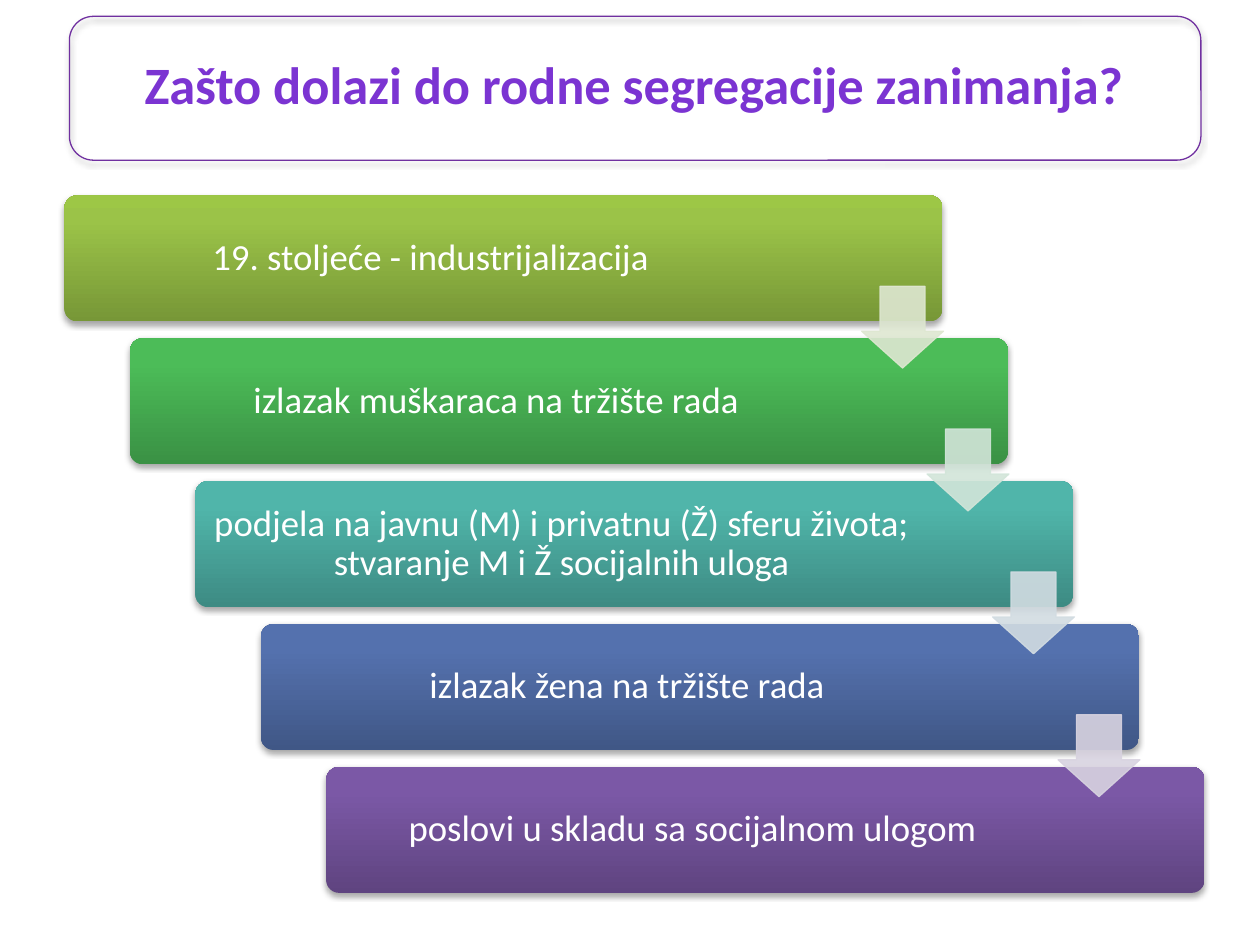
from dataclasses import dataclass

import pptx
import pptx.dml.color
import pptx.enum.shapes
import pptx.enum.text
import pptx.oxml
import pptx.oxml.ns
import pptx.util
from pptx.util import Cm

SHAPE = pptx.enum.shapes.MSO_SHAPE
FONT = "Calibri"
COLORS = {"title": "7B34D2", "frame": "7030A0", "text": "FFFFFF", "shadow": "000000"}
NS = pptx.oxml.ns.nsdecls("a")

# Staircase grid, in centimetres
LEFT, TOP = 1.3, 3.94
STEP_X, STEP_Y = 1.32, 2.88
BAR_W, BAR_H = 17.7, 2.54
TEXT_W = 14.76
ARROW_DX, ARROW_DY, ARROW = 16.07, 1.83, 1.65


@dataclass
class Step:
    text: str
    gradient: tuple[str, str, str]  # bottom, near top, top
    arrow: str | None = None        # arrow to the next step


STEPS = [
    Step("19. stoljeće - industrijalizacija", ("779737", "9BC348", "9DC746"), "DEE7D1"),
    Step("izlazak muškaraca na tržište rada", ("3A9144", "4CBC58", "4ABF57"), "D2E5D9"),
    Step("podjela na javnu (M) i privatnu (Ž) sferu života; stvaranje M i Ž socijalnih uloga",
         ("3D8B83", "50B5AA", "4EB8AC"), "D2DCE2"),
    Step("izlazak žena na tržište rada", ("405786", "5471AE", "5271B0"), "D8D3E0"),
    Step("poslovi u skladu sa socijalnom ulogom", ("5F4480", "7B58A6", "7C57A8")),
]


def rgb(color: str) -> pptx.dml.color.RGBColor:
    return pptx.dml.color.RGBColor.from_string(color)


def write_text(s, text: str, *, size: float, color: str, bold: bool = False,
               inset: float = 0.23) -> None:
    tf = s.text_frame
    tf.word_wrap = True
    tf.auto_size = pptx.enum.text.MSO_AUTO_SIZE.NONE
    tf.vertical_anchor = pptx.enum.text.MSO_ANCHOR.MIDDLE
    tf.margin_left = tf.margin_right = tf.margin_top = tf.margin_bottom = Cm(inset)
    p = tf.paragraphs[0]
    p.alignment = pptx.enum.text.PP_ALIGN.CENTER
    p.line_spacing = 0.9
    r = p.add_run()
    r.text = text
    r.font.name, r.font.size, r.font.bold = FONT, pptx.util.Pt(size), bold
    r.font.color.rgb = rgb(color)


def add_shape(slide, kind, x: float, y: float, w: float, h: float, adjustments=()):
    s = slide.shapes.add_shape(kind, Cm(x), Cm(y), Cm(w), Cm(h))
    s.shadow.inherit = False
    for i, value in enumerate(adjustments):
        s.adjustments[i] = value
    return s


def add_shadow(s) -> None:
    effects = s._element.spPr.find(pptx.oxml.ns.qn("a:effectLst"))
    effects.append(pptx.oxml.parse_xml(
        f'<a:outerShdw {NS} blurRad="40000" dist="23000" dir="5400000" rotWithShape="0">'
        f'<a:srgbClr val="{COLORS["shadow"]}"><a:alpha val="35000"/></a:srgbClr>'
        '</a:outerShdw>'))


def fill_gradient(s, colors: tuple[str, str, str]) -> None:
    s.fill.gradient()
    s.fill.gradient_angle = 90
    stops = next(s._element.spPr.iter(pptx.oxml.ns.qn("a:gsLst")))
    for stop in list(stops):
        stops.remove(stop)
    for position, color in zip((0, 80, 100), colors):
        stops.append(pptx.oxml.parse_xml(
            f'<a:gs {NS} pos="{position * 1000}"><a:srgbClr val="{color}"/></a:gs>'))


def add_title(slide, text: str) -> None:
    frame = add_shape(slide, SHAPE.ROUNDED_RECTANGLE, 1.4, 0.33, 22.81, 2.9)
    frame.fill.background()
    frame.line.color.rgb = rgb(COLORS["frame"])
    frame.line.width = pptx.util.Pt(0.75)
    add_shadow(frame)
    title = slide.shapes.title
    title.left, title.top, title.width, title.height = Cm(1.65), Cm(0.46), Cm(22.28), Cm(2.62)
    write_text(title, text, size=30, color=COLORS["title"], bold=True, inset=0.3)


def add_bar(slide, i: int, step: Step) -> None:
    x, y = LEFT + i * STEP_X, TOP + i * STEP_Y
    bar = add_shape(slide, SHAPE.ROUNDED_RECTANGLE, x, y, BAR_W, BAR_H, (0.1,))
    fill_gradient(bar, step.gradient)
    bar.line.fill.background()
    add_shadow(bar)
    box = slide.shapes.add_textbox(Cm(x), Cm(y), Cm(TEXT_W), Cm(BAR_H))
    write_text(box, step.text, size=21, color=COLORS["text"])


def add_arrow(slide, i: int, color: str) -> None:
    s = add_shape(slide, SHAPE.DOWN_ARROW, LEFT + i * STEP_X + ARROW_DX,
                  TOP + i * STEP_Y + ARROW_DY, ARROW, ARROW, (0.55, 0.45))
    s.fill.solid()
    s.fill.fore_color.rgb = s.line.color.rgb = rgb(color)
    s.line.width = pptx.util.Pt(0.75)
    for clr in s._element.spPr.iter(pptx.oxml.ns.qn("a:srgbClr")):
        clr.append(pptx.oxml.parse_xml(f'<a:alpha {NS} val="90000"/>'))


def main() -> None:
    prs = pptx.Presentation()
    prs.slide_width, prs.slide_height = Cm(25.4), Cm(19.05)
    slide = prs.slides.add_slide(prs.slide_layouts[5])
    add_title(slide, "Zašto dolazi do rodne segregacije zanimanja?")
    for i, step in enumerate(STEPS):
        add_bar(slide, i, step)
    # Arrows lie over all the bars
    for i, step in enumerate(STEPS):
        if step.arrow:
            add_arrow(slide, i, step.arrow)
    prs.save("out.pptx")


if __name__ == "__main__":
    main()
